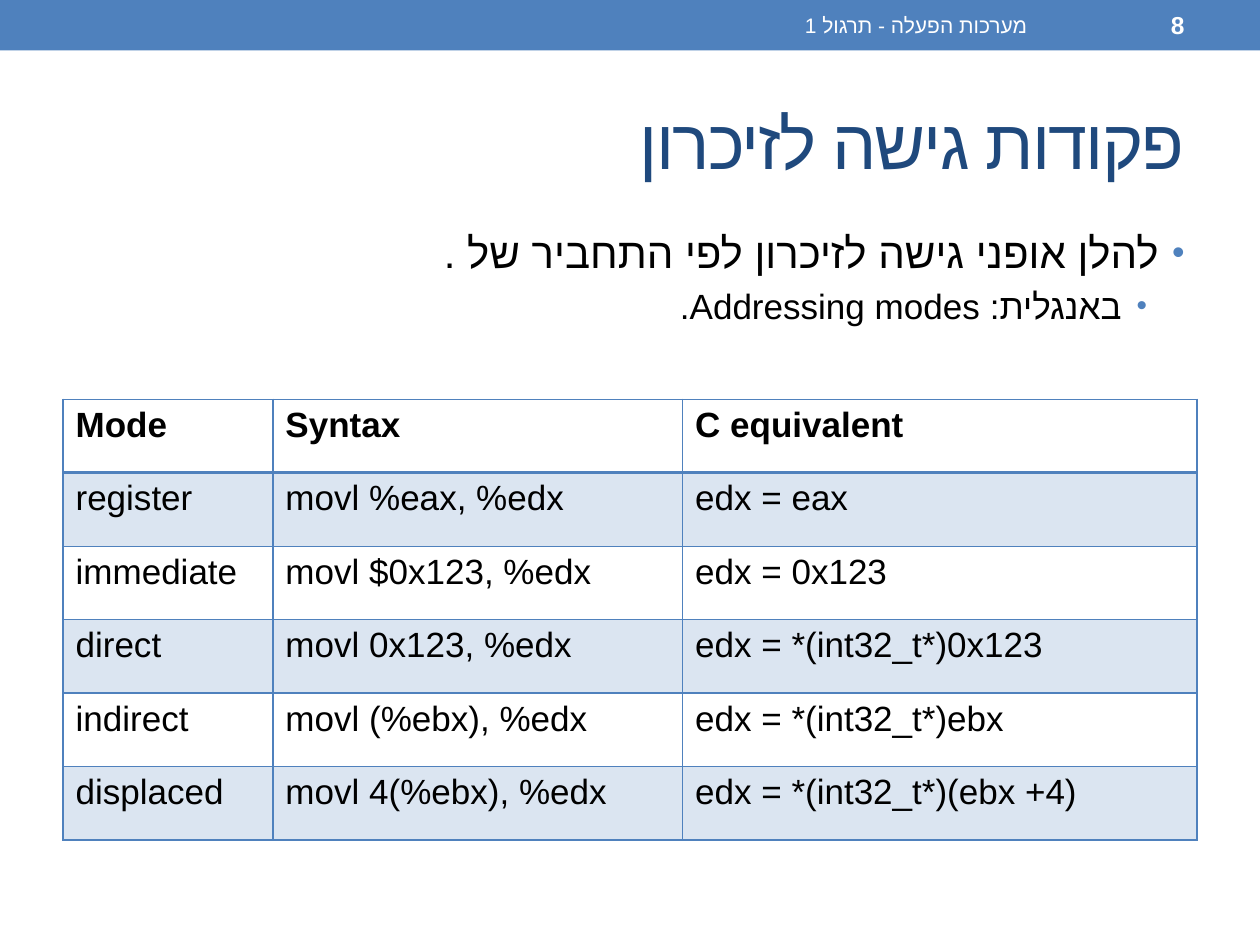
from dataclasses import dataclass

from lxml import etree
from pptx import Presentation
from pptx.dml.color import RGBColor
from pptx.enum.shapes import MSO_SHAPE
from pptx.enum.text import MSO_ANCHOR, PP_ALIGN
from pptx.oxml.ns import qn
from pptx.util import Cm, Pt

RECTANGLE = MSO_SHAPE.RECTANGLE
TOP = MSO_ANCHOR.TOP
MIDDLE = MSO_ANCHOR.MIDDLE
LEFT = PP_ALIGN.LEFT
RIGHT = PP_ALIGN.RIGHT

BLUE = RGBColor(0x4F, 0x81, 0xBD)
NAVY = RGBColor(0x1F, 0x49, 0x7D)
BLACK = RGBColor(0, 0, 0)
WHITE = RGBColor(0xFF, 0xFF, 0xFF)
FONT = "Arial"

SLIDE_WIDTH = Cm(25.4)
SLIDE_HEIGHT = Cm(19.05)
MARGIN = 1.27
CONTENT_WIDTH = 22.86
BULLET_HANG = Cm(0.51)

TABLE_TOP = 8.05
TABLE_HEIGHT = 8.89
COLUMN_WIDTHS = (4.23, 8.26, 10.37)
ROWS = (
    ("Mode", "Syntax", "C equivalent"),
    ("register", "movl %eax, %edx", "edx = eax"),
    ("immediate", "movl $0x123, %edx", "edx = 0x123"),
    ("direct", "movl 0x123, %edx", "edx = *(int32_t*)0x123"),
    ("indirect", "movl (%ebx), %edx", "edx = *(int32_t*)ebx"),
    ("displaced", "movl 4(%ebx), %edx", "edx = *(int32_t*)(ebx +4)"),
)


@dataclass(frozen=True)
class Line:
    text: str
    size: float
    color: RGBColor = BLACK
    bold: bool = False
    spacing: int = 0
    bullet_indent: float | None = None


@dataclass(frozen=True)
class TextBlock:
    left: float
    top: float
    width: float
    height: float
    lines: tuple[Line, ...]
    anchor: MSO_ANCHOR = MIDDLE


TEXT_BLOCKS = (
    TextBlock(MARGIN, 1.48, CONTENT_WIDTH, 2.75,
              (Line("פקודות גישה לזיכרון", 40, NAVY, spacing=-100),)),
    TextBlock(MARGIN, 4.45, CONTENT_WIDTH, 13.55, (
        Line("להלן אופני גישה לזיכרון לפי התחביר של .", 24, bullet_indent=0.51),
        Line("באנגלית: Addressing modes.", 20, bullet_indent=1.27),
    ), TOP),
    TextBlock(9.53, 0.05, 11.43, 0.91,
              (Line("מערכות הפעלה - תרגול 1", 12, WHITE),)),
    TextBlock(21.16, 0.05, 2.97, 0.91, (Line("8", 14, WHITE, bold=True),)),
)


def add_line(paragraph, line: Line) -> None:
    run = paragraph.add_run()
    run.text = line.text
    run.font.name = FONT
    run.font.size = Pt(line.size)
    run.font.bold = line.bold
    run.font.color.rgb = line.color
    properties = run._r.get_or_add_rPr()
    etree.SubElement(properties, qn("a:cs"), typeface=FONT)
    if line.spacing:
        properties.set("spc", str(line.spacing))


def add_bullet(paragraph, line: Line) -> None:
    paragraph.space_before = Pt(line.size * 0.2)
    properties = paragraph._p.get_or_add_pPr()
    properties.set("marL", str(Cm(line.bullet_indent)))
    properties.set("marR", "0")
    properties.set("indent", str(-BULLET_HANG))
    color = etree.SubElement(properties, qn("a:buClr"))
    etree.SubElement(color, qn("a:srgbClr"), val=str(BLUE))
    etree.SubElement(properties, qn("a:buSzPct"), val="85000")
    etree.SubElement(properties, qn("a:buFont"), typeface=FONT)
    etree.SubElement(properties, qn("a:buChar"), char="•")


def add_text_block(slide, block: TextBlock) -> None:
    shape = slide.shapes.add_textbox(
        Cm(block.left), Cm(block.top), Cm(block.width), Cm(block.height))
    frame = shape.text_frame
    frame.word_wrap = True
    frame.vertical_anchor = block.anchor
    for index, line in enumerate(block.lines):
        paragraph = frame.add_paragraph() if index else frame.paragraphs[0]
        paragraph.alignment = RIGHT
        paragraph._p.get_or_add_pPr().set("rtl", "1")
        if line.bullet_indent is not None:
            add_bullet(paragraph, line)
        add_line(paragraph, line)


def add_border(cell, side: str, width: float) -> None:
    properties = cell._tc.get_or_add_tcPr()
    border = etree.SubElement(properties, qn(f"a:{side}"), w=str(Pt(width)))
    fill = etree.SubElement(border, qn("a:solidFill"))
    etree.SubElement(fill, qn("a:srgbClr"), val=str(BLUE))


def fill_cell(cell, tinted: bool) -> None:
    if not tinted:
        cell.fill.background()
        return
    cell.fill.solid()
    cell.fill.fore_color.rgb = BLUE
    color = cell._tc.tcPr.find(qn("a:solidFill")).find(qn("a:srgbClr"))
    etree.SubElement(color, qn("a:alpha"), val="20000")


def add_modes_table(slide) -> None:
    table = slide.shapes.add_table(
        len(ROWS), len(COLUMN_WIDTHS), Cm(MARGIN), Cm(TABLE_TOP),
        Cm(CONTENT_WIDTH), Cm(TABLE_HEIGHT)).table
    table.first_row = False
    table.horz_banding = False
    for column, width in zip(table.columns, COLUMN_WIDTHS):
        column.width = Cm(width)
    for row_index, texts in enumerate(ROWS):
        is_header = row_index == 0
        for column_index, text in enumerate(texts):
            cell = table.cell(row_index, column_index)
            for side in ("lnL", "lnR", "lnT", "lnB"):
                is_header_rule = (row_index, side) in ((0, "lnB"), (1, "lnT"))
                add_border(cell, side, 2 if is_header_rule else 1)
            fill_cell(cell, row_index % 2 == 1)
            paragraph = cell.text_frame.paragraphs[0]
            paragraph.alignment = LEFT
            add_line(paragraph, Line(text, 20, bold=is_header))


def add_header_band(slide) -> None:
    band = slide.shapes.add_shape(RECTANGLE, 0, 0, SLIDE_WIDTH, Cm(1.02))
    band.shadow.inherit = False
    band.fill.solid()
    band.fill.fore_color.rgb = BLUE
    band.line.fill.background()


def main() -> None:
    presentation = Presentation()
    presentation.slide_width = SLIDE_WIDTH
    presentation.slide_height = SLIDE_HEIGHT
    slide = presentation.slides.add_slide(presentation.slide_layouts[6])
    add_header_band(slide)
    for block in TEXT_BLOCKS:
        add_text_block(slide, block)
    add_modes_table(slide)
    presentation.save("out.pptx")


if __name__ == "__main__":
    main()
